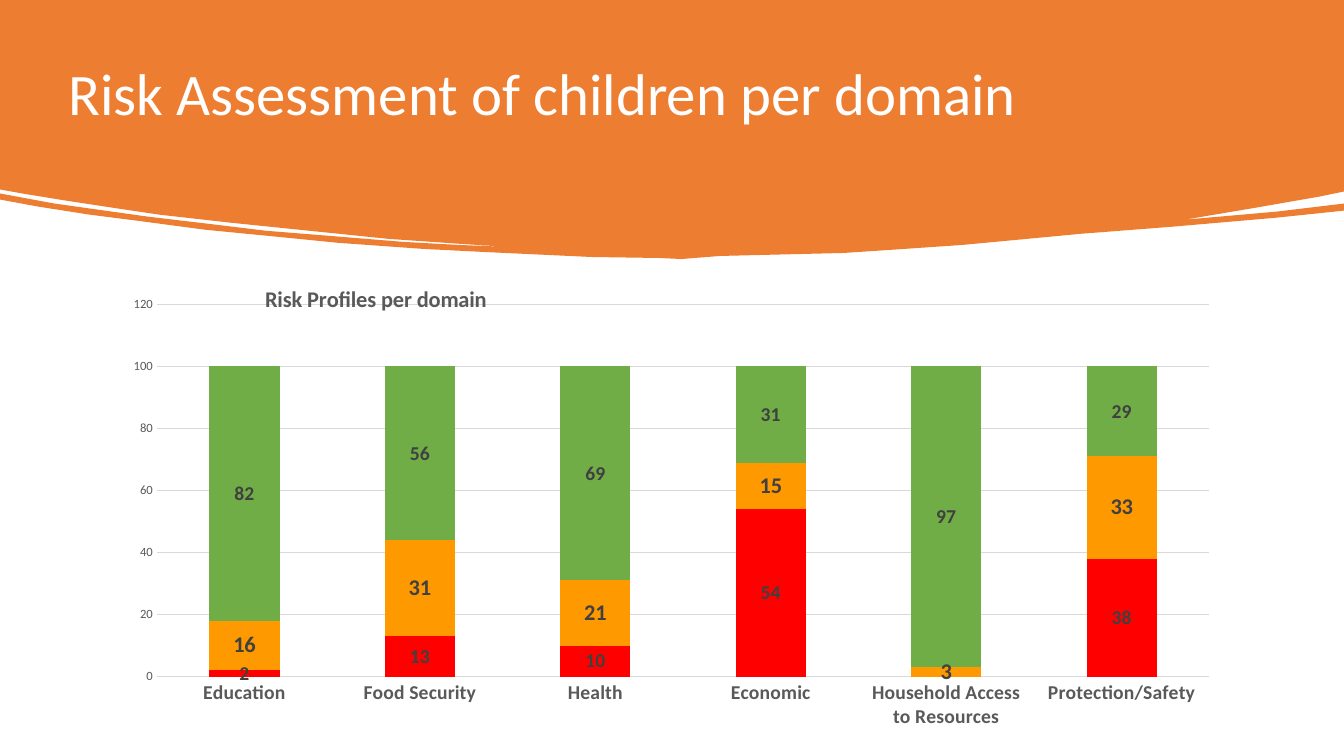
from dataclasses import dataclass

import pptx
import pptx.chart.data
import pptx.dml.color
import pptx.enum.chart
import pptx.enum.text
import pptx.oxml
import pptx.oxml.ns
import pptx.util
from pptx.util import Inches

FONT = "Calibri"
ORANGE, WHITE = "ED7D31", "FFFFFF"
AXIS_TEXT, LABEL_TEXT, GRID = "595959", "404040", "D9D9D9"


@dataclass
class RiskLevel:
    name: str
    values: tuple
    color: str
    label_size: int


DOMAINS = ("Education", "Food Security", "Health", "Economic",
           "Household Access to Resources", "Protection/Safety")
RISK_LEVELS = (
    RiskLevel("High risk", (2, 13, 10, 54, None, 38), "FF0000", 14),
    RiskLevel("Moderate Risk", (16, 31, 21, 15, 3, 33), "FF9900", 16),
    RiskLevel("Low Risk", (82, 56, 69, 31, 97, 29), "70AD47", 14),
)

# Banner outline in inches, clockwise from the top left corner
BANNER_TOP = ((0, 0), (13.33, 0))
RIGHT_NOTCH = ((13.33, 1.9), (13.09, 1.95), (12.46, 2.06), (11.75, 2.18),
               (12.66, 2.1), (13.33, 2.02))
LOWER_EDGE = ((13.33, 2.09), (12.66, 2.16), (11.62, 2.25), (10.72, 2.32),
              (9.55, 2.43), (8.82, 2.48), (8.37, 2.51), (7.14, 2.54),
              (6.76, 2.57), (6.54, 2.56), (5.87, 2.55), (4.8, 2.5),
              (4.2, 2.47), (3.36, 2.41), (2.76, 2.35), (2.04, 2.28),
              (1.36, 2.19), (0.89, 2.13), (0.38, 2.05), (0, 1.98))
LEFT_NOTCH = ((0, 1.92), (0.54, 2.02), (1.04, 2.09), (1.47, 2.15),
              (2.06, 2.22), (2.64, 2.29), (3.26, 2.34), (4, 2.4),
              (4.54, 2.43), (5.04, 2.45), (4.57, 2.42), (3.85, 2.37),
              (3.07, 2.29), (2.29, 2.21), (1.58, 2.13), (1.11, 2.06),
              (0.65, 1.99), (0.22, 1.92), (0, 1.88))


def rgb(color: str) -> pptx.dml.color.RGBColor:
    return pptx.dml.color.RGBColor.from_string(color)


def set_font(font, size: int, color: str, bold: bool = False) -> None:
    font.name = FONT
    font.size = pptx.util.Pt(size)
    font.bold = bold
    font.color.rgb = rgb(color)


def set_line(line, color: str) -> None:
    line.color.rgb = rgb(color)
    line.width = pptx.util.Pt(0.75)


def manual_layout(x: float, y: float, width: float = 0, height: float = 0):
    """Return a chart layout in fractions of the chart area."""
    settings = {"xMode": "edge", "yMode": "edge", "x": x, "y": y}
    if width:
        settings = {"layoutTarget": "inner", **settings, "w": width, "h": height}
    items = "".join(f'<c:{key} val="{value}"/>' for key, value in settings.items())
    return pptx.oxml.parse_xml(
        f'<c:layout {pptx.oxml.ns.nsdecls("c")}>'
        f"<c:manualLayout>{items}</c:manualLayout></c:layout>")


def add_banner(slide) -> None:
    start, *outline = [(Inches(x), Inches(y)) for x, y in
                       BANNER_TOP + RIGHT_NOTCH + LOWER_EDGE + LEFT_NOTCH]
    builder = slide.shapes.build_freeform(*start)
    builder.add_line_segments(outline, close=True)
    shape = builder.convert_to_shape()
    shape.shadow.inherit = False
    shape.fill.solid()
    shape.fill.fore_color.rgb = rgb(ORANGE)
    shape.line.fill.background()


def add_heading(slide) -> None:
    box = slide.shapes.add_textbox(Inches(0.58), Inches(0.22), Inches(11.5), Inches(1.47))
    frame = box.text_frame
    frame.word_wrap = True
    frame.vertical_anchor = pptx.enum.text.MSO_ANCHOR.MIDDLE
    paragraph = frame.paragraphs[0]
    paragraph.text = "Risk Assessment of children per domain"
    paragraph.line_spacing = 0.9
    set_font(paragraph.font, 42, WHITE)


def style_axes(chart) -> None:
    no_tick = pptx.enum.chart.XL_TICK_MARK.NONE
    for axis in (chart.category_axis, chart.value_axis):
        axis.major_tick_mark = axis.minor_tick_mark = no_tick
    set_font(chart.category_axis.tick_labels.font, 14, AXIS_TEXT, bold=True)
    set_line(chart.category_axis.format.line, GRID)

    value_axis = chart.value_axis
    value_axis.minimum_scale, value_axis.maximum_scale = 0, 120
    value_axis.major_unit = 20
    set_font(value_axis.tick_labels.font, 9, AXIS_TEXT)
    value_axis.format.line.fill.background()
    set_line(value_axis.major_gridlines.format.line, GRID)


def add_risk_chart(slide) -> None:
    data = pptx.chart.data.CategoryChartData()
    data.categories = DOMAINS
    for level in RISK_LEVELS:
        data.add_series(level.name, level.values)
    chart = slide.shapes.add_chart(
        pptx.enum.chart.XL_CHART_TYPE.COLUMN_STACKED,
        Inches(1.16), Inches(2.68), Inches(10.99), Inches(4.61), data).chart
    set_font(chart.font, 10, "000000")
    chart.has_legend = False

    # Chart title and plot area
    title = chart.chart_title
    paragraph = title.text_frame.paragraphs[0]
    paragraph.text = "Risk Profiles per domain"
    set_font(paragraph.font, 16, AXIS_TEXT, bold=True)
    title_element = chart._chartSpace.chart.find(pptx.oxml.ns.qn("c:title"))
    plot_element = chart._chartSpace.chart.plotArea
    for element, layout in ((title_element, manual_layout(0.13, 0.02)),
                            (plot_element, manual_layout(0.036, 0.074, 0.95, 0.801))):
        for old_layout in element.findall(pptx.oxml.ns.qn("c:layout")):
            element.remove(old_layout)
        element.insert(1 if element is title_element else 0, layout)
    title.include_in_layout = True
    style_axes(chart)

    # Stacked risk levels
    plot = chart.plots[0]
    plot.gap_width, plot.overlap = 150, 100
    plot.vary_by_categories = False
    for series, level in zip(plot.series, RISK_LEVELS):
        series.format.fill.solid()
        series.format.fill.fore_color.rgb = rgb(level.color)
        series.data_labels.show_value = True
        set_font(series.data_labels.font, level.label_size, LABEL_TEXT, bold=True)


def main() -> None:
    presentation = pptx.Presentation()
    presentation.slide_width = Inches(13.33)
    presentation.slide_height = Inches(7.5)
    slide = presentation.slides.add_slide(presentation.slide_layouts[6])
    add_banner(slide)
    add_heading(slide)
    add_risk_chart(slide)
    presentation.save("out.pptx")


if __name__ == "__main__":
    main()
